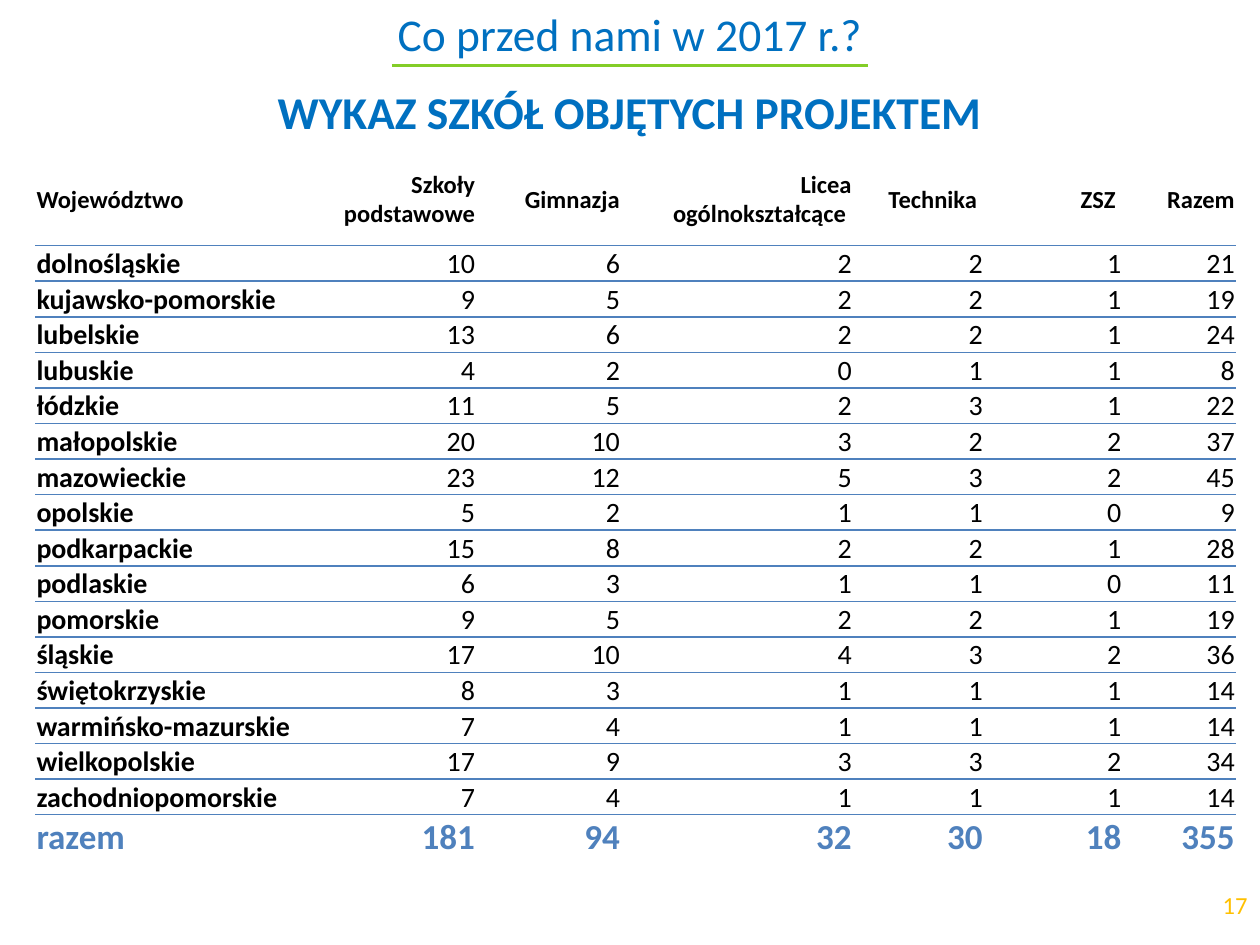
from dataclasses import dataclass

from lxml.etree import SubElement
from pptx import Presentation
from pptx.dml.color import RGBColor as RGB
from pptx.enum.shapes import MSO_CONNECTOR as Link
from pptx.enum.text import MSO_ANCHOR as Anchor, MSO_AUTO_SIZE as Fit, PP_ALIGN as Align
from pptx.oxml import parse_xml
from pptx.oxml.ns import nsdecls, qn
from pptx.util import Inches, Pt


@dataclass(frozen=True)
class Theme:
    font: str = "Calibri"
    title: str = "0070C0"
    rule: str = "83CD27"
    grid: str = "4F81BD"
    ink: str = "000000"
    paper: str = "FFFFFF"
    page: str = "FFC000"
    big: int = 26
    total: int = 20
    body: int = 16
    small: int = 14


THEME = Theme()
NO_STYLE = "{2D5ABB26-0587-4C30-8999-92F81FD0307C}"
WIDTHS = [2.16, 1.34, 1.15, 1.84, 1.04, 1.1, 0.9]
HEAD = ["Województwo", "Szkoły podstawowe", "Gimnazja", "Licea ogólnokształcące ",
        "Technika ", "ZSZ ", "Razem"]
SCHOOLS = {
    "dolnośląskie": (10, 6, 2, 2, 1),
    "kujawsko-pomorskie": (9, 5, 2, 2, 1),
    "lubelskie": (13, 6, 2, 2, 1),
    "lubuskie": (4, 2, 0, 1, 1),
    "łódzkie": (11, 5, 2, 3, 1),
    "małopolskie": (20, 10, 3, 2, 2),
    "mazowieckie": (23, 12, 5, 3, 2),
    "opolskie": (5, 2, 1, 1, 0),
    "podkarpackie": (15, 8, 2, 2, 1),
    "podlaskie": (6, 3, 1, 1, 0),
    "pomorskie": (9, 5, 2, 2, 1),
    "śląskie": (17, 10, 4, 3, 2),
    "świętokrzyskie": (8, 3, 1, 1, 1),
    "warmińsko-mazurskie": (7, 4, 1, 1, 1),
    "wielkopolskie": (17, 9, 3, 3, 2),
    "zachodniopomorskie": (7, 4, 1, 1, 1),
}


def write(para, text, size=THEME.body, color=THEME.ink, bold=False,
          align=Align.LEFT, before=0):
    para.alignment = align
    if before:
        para.space_before = Pt(before)
    run = para.add_run()
    run.text = text
    font = run.font
    font.name, font.size, font.bold = THEME.font, Pt(size), bold
    font.color.rgb = RGB.from_string(color)


def border(cell, sides):
    """Draw a grid line on the given sides, named as in lnT and lnB."""
    props = cell._tc.get_or_add_tcPr()
    for spot, side in enumerate(sides):
        props.insert(spot, parse_xml(
            f'<a:ln{side} {nsdecls("a")} w="{Pt(1)}"><a:solidFill>'
            f'<a:srgbClr val="{THEME.grid}"/></a:solidFill></a:ln{side}>'))


def add_title(slide, x, y, w, h):
    box = slide.shapes.title
    box.left, box.top, box.width, box.height = map(Inches, (x, y, w, h))
    frame = box.text_frame
    frame.auto_size, frame.vertical_anchor = Fit.NONE, Anchor.TOP
    look = dict(size=THEME.big, color=THEME.title, align=Align.CENTER)
    write(frame.paragraphs[0], "Co przed nami w 2017 r.?", **look)
    write(frame.add_paragraph(), "WYKAZ SZKÓŁ OBJĘTYCH PROJEKTEM",
          bold=True, before=13, **look)

    inset, drop = 3.11, 0.52
    line = slide.shapes.add_connector(
        Link.STRAIGHT, Inches(x + inset), Inches(y + drop),
        Inches(x + w - inset), Inches(y + drop))
    line.line.color.rgb = RGB.from_string(THEME.rule)
    line.line.width = Pt(1.5)
    SubElement(line._element.spPr, qn("a:effectLst"))


def fill_cell(cell, text, anchor, sides, **look):
    cell.margin_left = cell.margin_right = cell.margin_top = Inches(0.01)
    cell.margin_bottom = 0
    cell.vertical_anchor = anchor
    cell.fill.solid()
    cell.fill.fore_color.rgb = RGB.from_string(THEME.paper)
    border(cell, sides)
    write(cell.text_frame.paragraphs[0], text, **look)


def add_schools(slide, x, y, w, h):
    rows = [(name, *counts, sum(counts)) for name, counts in SCHOOLS.items()]
    sums = [sum(col) for col in list(zip(*rows))[1:]]
    rows = [HEAD, *rows, ("razem", *sums)]
    last = len(rows) - 1

    table = slide.shapes.add_table(
        len(rows), len(HEAD), Inches(x), Inches(y), Inches(w), Inches(h)).table
    table.first_row = table.horz_banding = False
    table._tbl.tblPr.find(qn("a:tableStyleId")).text = NO_STYLE
    for col, width in zip(table.columns, WIDTHS):
        col.width = Inches(width)

    top, foot = 0.74, 0.34
    step = (h - top - foot) / len(SCHOOLS)
    for r, row in enumerate(rows):
        high, look, anchor = step, {}, Anchor.BOTTOM
        if r == 0:
            high, look, anchor = top, dict(size=THEME.small), Anchor.MIDDLE
        elif r == last:
            high, look = foot, dict(size=THEME.total, color=THEME.grid)
        table.rows[r].height = Inches(high)
        sides = ("T" if r else "") + ("B" if r < last else "")
        for c, value in enumerate(row):
            fill_cell(table.cell(r, c), str(value), anchor, sides,
                      bold=c == 0 or r in (0, last),
                      align=Align.RIGHT if c else Align.LEFT, **look)


def add_page(slide, x, y, w, h):
    box = slide.shapes.add_textbox(*map(Inches, (x, y, w, h)))
    frame = box.text_frame
    frame.word_wrap, frame.vertical_anchor = True, Anchor.MIDDLE
    write(frame.paragraphs[0], "17", size=THEME.small, color=THEME.page,
          align=Align.RIGHT)


def main():
    deck = Presentation()
    deck.slide_width, deck.slide_height = Inches(10), Inches(7.5)
    slide = deck.slides.add_slide(deck.slide_layouts[5])
    add_page(slide, 7.67, 6.98, 2.33, 0.4)
    add_schools(slide, 0.28, 1.21, 9.53, 5.6)
    add_title(slide, 0, 0, 10, 1.18)
    deck.save("out.pptx")


if __name__ == "__main__":
    main()
